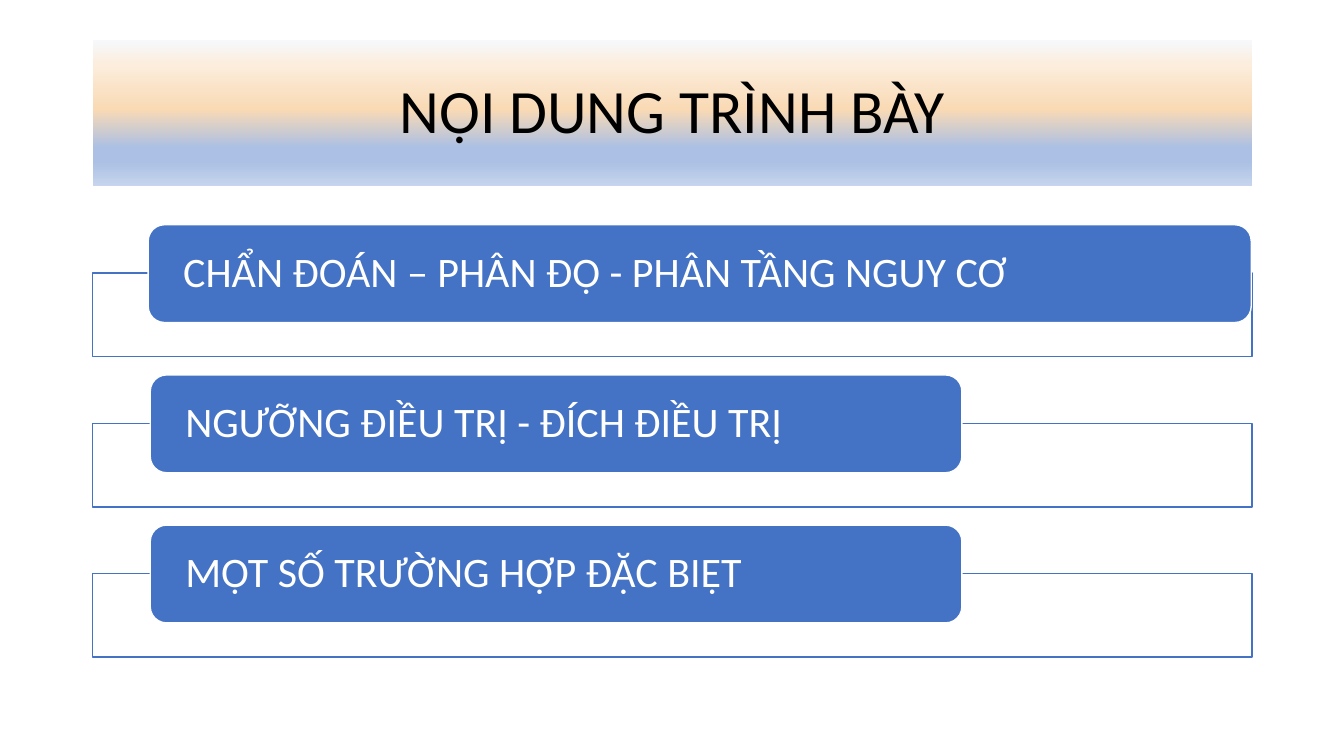
from lxml import etree
from pptx import Presentation
from pptx.dml.color import RGBColor
from pptx.enum.shapes import MSO_SHAPE
from pptx.enum.text import MSO_ANCHOR, PP_ALIGN
from pptx.oxml.ns import qn
from pptx.util import Inches, Pt

RECT, ROUNDED = MSO_SHAPE.RECTANGLE, MSO_SHAPE.ROUNDED_RECTANGLE
MIDDLE, LEFT, CENTER = MSO_ANCHOR.MIDDLE, PP_ALIGN.LEFT, PP_ALIGN.CENTER
BLUE, WHITE, BLACK = "4472C4", "FFFFFF", "000000"

# Grid in inches
MARGIN, CONTENT_WIDTH = 0.92, 11.5
FIRST_ROW, ROW_STEP = 2.23, 1.49
FRAME_DROP, FRAME_HEIGHT, LABEL_HEIGHT = 0.48, 0.83, 0.97

TITLE_STOPS = [(0, "F6F8FC"), (17, "FCEDDC"), (34, "FAE2C6"), (47, "F9DAB5"),
               (74, "ABC0E4"), (83, "ABC0E4"), (100, "C7D5ED")]
TOPICS = [
    ("CHẨN ĐOÁN – PHÂN ĐỘ - PHÂN TẦNG NGUY CƠ", 1.47, 10.94),
    ("NGƯỠNG ĐIỀU TRỊ - ĐÍCH ĐIỀU TRỊ", 1.49, 8.05),
    ("MỘT SỐ TRƯỜNG HỢP ĐẶC BIỆT", 1.49, 8.05),
]


def add_box(kind, left, top, width, height, fill, line=None):
    box = page.shapes.add_shape(kind, *map(Inches, (left, top, width, height)))
    box.shadow.inherit = False
    box.fill.solid()
    box.fill.fore_color.rgb = RGBColor.from_string(fill)
    if line:
        box.line.color.rgb = RGBColor.from_string(line)
        box.line.width = Pt(1)
    else:
        box.line.fill.background()
    return box


def write(box, text, size, color, align, inset):
    frame = box.text_frame
    layout = {"word_wrap": True, "vertical_anchor": MIDDLE,
              "margin_left": Inches(inset), "margin_right": Inches(inset),
              "margin_top": 0, "margin_bottom": 0}
    for name, value in layout.items():
        setattr(frame, name, value)
    para = frame.paragraphs[0]
    para.alignment, para.line_spacing = align, 0.9
    span = para.add_run()
    span.text = text
    for name, value in {"name": "Calibri", "size": Pt(size)}.items():
        setattr(span.font, name, value)
    span.font.color.rgb = RGBColor.from_string(color)


deck = Presentation()
deck.slide_width, deck.slide_height = Inches(13.33), Inches(7.5)
page = deck.slides.add_slide(deck.slide_layouts[6])

# Title band with a vertical gradient
title = add_box(RECT, MARGIN, 0.4, CONTENT_WIDTH, 1.45, WHITE)
title.fill.gradient()
title.fill.gradient_angle = 270
stop_list = title.element.spPr.find(".//" + qn("a:gsLst"))
for old_stop in list(stop_list):
    stop_list.remove(old_stop)
for percent, color in TITLE_STOPS:
    stop = etree.SubElement(stop_list, qn("a:gs"), pos=str(percent * 1000))
    etree.SubElement(stop, qn("a:srgbClr"), val=color)
write(title, "NỘI DUNG TRÌNH BÀY", 44, BLACK, CENTER, 0.1)

# Topics: an outlined frame with a label over its top edge
for row, (topic, left, width) in enumerate(TOPICS):
    top = FIRST_ROW + row * ROW_STEP
    outline = add_box(RECT, MARGIN, top + FRAME_DROP, CONTENT_WIDTH,
                      FRAME_HEIGHT, WHITE, BLUE)
    fill_color = outline.element.spPr.find(qn("a:solidFill"))[0]
    etree.SubElement(fill_color, qn("a:alpha"), val="90000")
    label = add_box(ROUNDED, left, top, width, LABEL_HEIGHT, BLUE, WHITE)
    write(label, topic, 30, WHITE, LEFT, 0.3)

deck.save("out.pptx")
